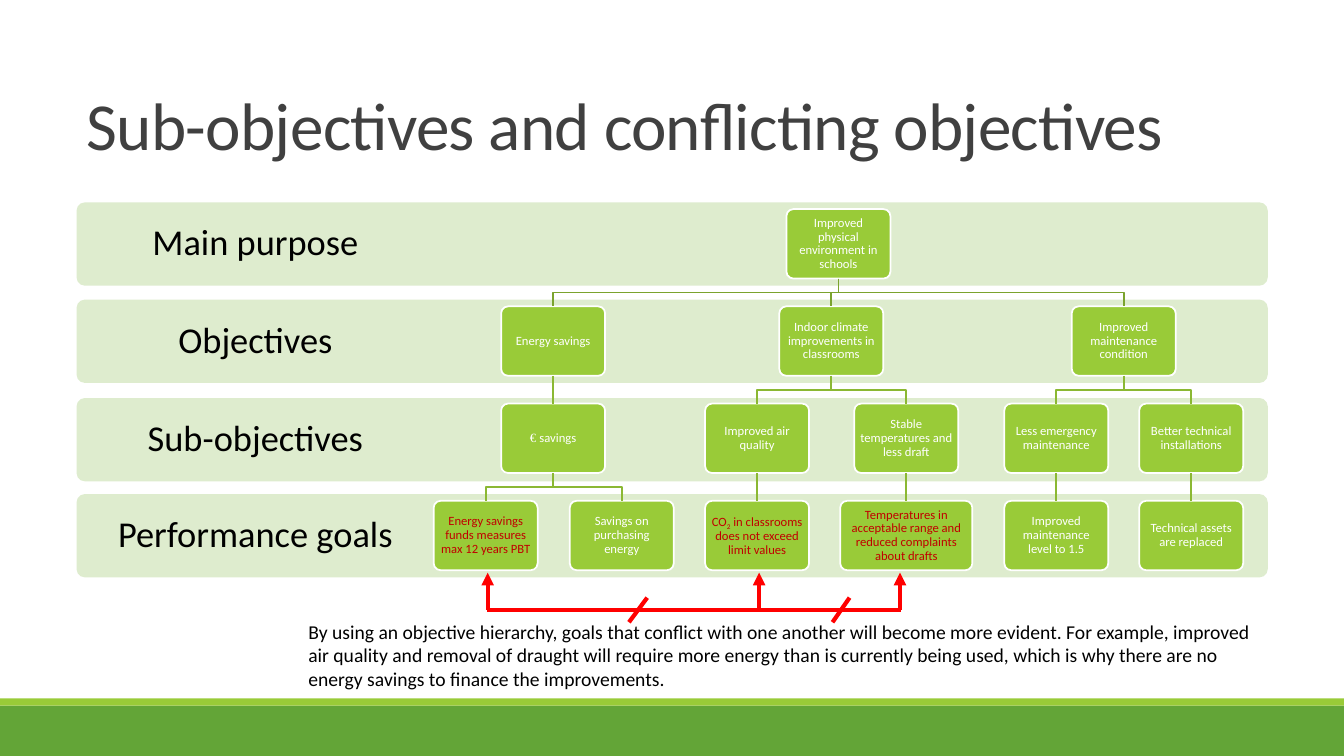
"""Build the slide on sub-objectives and conflicting objectives."""
from pptx import Presentation
from pptx.dml.color import RGBColor
from pptx.enum.shapes import MSO_CONNECTOR, MSO_SHAPE
from pptx.enum.text import MSO_ANCHOR, PP_ALIGN
from pptx.oxml.ns import qn
from pptx.util import Cm, Pt
from lxml.etree import SubElement

WHITE = RGBColor(0xFF, 0xFF, 0xFF)
BLACK = RGBColor(0, 0, 0)
GREY = RGBColor(0x40, 0x40, 0x40)
GREEN = RGBColor(0x63, 0xA5, 0x37)
LIME = RGBColor(0x99, 0xCB, 0x38)
PALE = RGBColor(0xDE, 0xEC, 0xCE)
OLIVE = RGBColor(0x7B, 0xA3, 0x2D)
MOSS = RGBColor(0x8B, 0xB8, 0x33)
DARK_RED = RGBColor(0xC0, 0, 0)
RED = RGBColor(0xFF, 0, 0)

TITLE = "Sub-objectives and conflicting objectives"
NOTE = ("By using an objective hierarchy, goals that conflict with one another will "
        "become more evident. For example, improved air quality and removal of draught "
        "will require more energy than is currently being used, which is why there are "
        "no energy savings to finance the improvements.")
BANDS = [("Main purpose", 5.1), ("Objectives", 7.55),
         ("Sub-objectives", 10.03), ("Performance goals", 12.45)]
EURO = [("€ ", "Times New Roman", 0), ("savings", "Calibri", 0)]
CO2 = [("CO", "Calibri", 0), ("2", "Calibri", -25),
       (" in classrooms does not exceed limit values", "Calibri", 0)]

# Each goal: name, parent, row, centre, text, text colour, width
GOALS = [
    ("root", None, 0, 21.13, "Improved physical environment in schools", WHITE, 2.62),
    ("energy", "root", 1, 13.94, "Energy savings", WHITE, 2.62),
    ("climate", "root", 1, 20.95, "Indoor climate improvements in classrooms", WHITE, 2.62),
    ("upkeep", "root", 1, 28.32, "Improved maintenance condition", WHITE, 2.62),
    ("euro", "energy", 2, 13.94, EURO, WHITE, 2.62),
    ("air", "climate", 2, 19.08, "Improved air quality", WHITE, 2.62),
    ("heat", "climate", 2, 22.84, "Stable temperatures and less draft", WHITE, 2.62),
    ("repair", "upkeep", 2, 26.62, "Less emergency maintenance", WHITE, 2.62),
    ("plant", "upkeep", 2, 30.02, "Better technical installations", WHITE, 2.62),
    ("funds", "euro", 3, 12.24, "Energy savings funds measures max 12 years PBT",
     DARK_RED, 2.62),
    ("buying", "euro", 3, 15.67, "Savings on purchasing energy", WHITE, 2.62),
    ("limit", "air", 3, 19.08, CO2, DARK_RED, 2.62),
    ("range", "heat", 3, 22.84,
     "Temperatures in acceptable range and reduced complaints about drafts",
     DARK_RED, 3.33),
    ("level", "repair", 3, 26.62, "Improved maintenance level to 1.5", WHITE, 2.62),
    ("assets", "plant", 3, 30.02, "Technical assets are replaced", WHITE, 2.62),
]
ARROWS = [12.29, 19.13, 22.68]
SLASHES = [(15.85, 16.31), (20.98, 21.41)]
TOP, STEP, TALL = 5.27, 2.45, 1.75
BAR, TIP = 15.37, 14.43


def write(shape, text, size, color, inset=None, align=PP_ALIGN.CENTER,
          anchor=MSO_ANCHOR.MIDDLE, lead=0.9, track=0):
    frame = shape.text_frame
    frame.word_wrap = True
    frame.vertical_anchor = anchor
    if inset is not None:
        frame.margin_left = frame.margin_right = Cm(inset)
        frame.margin_top = frame.margin_bottom = Cm(inset)
    para = frame.paragraphs[0]
    para.alignment = align
    para.line_spacing = lead
    runs = [(text, "Calibri", 0)] if isinstance(text, str) else text
    for words, face, base in runs:
        run = para.add_run()
        run.text = words
        run.font.name = face
        run.font.size = Pt(size)
        run.font.color.rgb = color
        props = run._r.get_or_add_rPr()
        if base:
            props.set("baseline", str(base * 1000))
        if track:
            props.set("spc", str(track))


def block(shapes, kind, left, top, width, height, fill, edge=None):
    shape = shapes.add_shape(kind, Cm(left), Cm(top), Cm(width), Cm(height))
    shape.shadow.inherit = False
    shape.fill.solid()
    shape.fill.fore_color.rgb = fill
    if kind == MSO_SHAPE.ROUNDED_RECTANGLE:
        shape.adjustments[0] = 0.1
    if edge is None:
        shape.line.fill.background()
    else:
        shape.line.color.rgb = edge
        shape.line.width = Pt(1.25)
    return shape


def label(shapes, left, top, width, height):
    return shapes.add_textbox(Cm(left), Cm(top), Cm(width), Cm(height))


def stroke(shapes, start, end, color, width, arrow=False):
    line = shapes.add_connector(MSO_CONNECTOR.STRAIGHT, *map(Cm, start + end))
    line.line.color.rgb = color
    line.line.width = Pt(width)
    props = line._element.spPr
    if arrow:
        SubElement(props.find(qn("a:ln")), qn("a:tailEnd"), type="triangle")
    SubElement(props, qn("a:effectLst"))
    return line


def link(shapes, upper, lower, row, start, end):
    color = OLIVE if row == 1 else MOSS
    high, low = TOP + STEP * (row - 1) + TALL, TOP + STEP * row
    if start == end:
        line = stroke(shapes, (start, high), (end, low), color, 1.25)
        line.begin_connect(upper, 2)
        line.end_connect(lower, 0)
        return
    mid = (high + low) / 2
    pen = shapes.build_freeform(Cm(start), Cm(high))
    bends = [(start, mid), (end, mid), (end, low)]
    pen.add_line_segments([(Cm(x), Cm(y)) for x, y in bends], close=False)
    elbow = pen.convert_to_shape()
    elbow.shadow.inherit = False
    elbow.fill.background()
    elbow.line.color.rgb = color
    elbow.line.width = Pt(1.25)


def main():
    deck = Presentation()
    deck.slide_width, deck.slide_height = Cm(33.87), Cm(19.05)
    shapes = deck.slides.add_slide(deck.slide_layouts[6]).shapes

    block(shapes, MSO_SHAPE.RECTANGLE, 0, 17.78, 33.87, 1.27, GREEN)
    block(shapes, MSO_SHAPE.RECTANGLE, 0, 17.6, 33.87, 0.18, LIME)
    write(label(shapes, 1.93, 0.23, 29.06, 4.04), TITLE, 48, GREY,
          align=PP_ALIGN.LEFT, anchor=MSO_ANCHOR.BOTTOM, lead=0.85, track=-50)

    for text, top in BANDS:
        block(shapes, MSO_SHAPE.ROUNDED_RECTANGLE, 1.93, top, 30.02, 2.1, PALE)
        write(label(shapes, 1.93, top, 9.02, 2.1), text, 26, BLACK, inset=0.5)

    boxes = {}
    for name, above, row, mid, text, color, wide in GOALS:
        box = block(shapes, MSO_SHAPE.ROUNDED_RECTANGLE, mid - wide / 2,
                    TOP + STEP * row, wide, TALL, LIME, WHITE)
        write(box, text, 9, color, inset=0.1)
        boxes[name] = box, mid
        if above:
            upper, start = boxes[above]
            link(shapes, upper, box, row, start, mid)

    for x in ARROWS:
        stroke(shapes, (x, BAR), (x, TIP), RED, 3, arrow=True)
    stroke(shapes, (ARROWS[0] - 0.02, BAR), (ARROWS[-1] + 0.02, BAR), RED, 3)
    for left, right in SLASHES:
        stroke(shapes, (left, 15.68), (right, 15.06), RED, 3)

    write(label(shapes, 7.52, 15.49, 24.82, 2.06), NOTE, 14, BLACK,
          align=PP_ALIGN.LEFT, anchor=MSO_ANCHOR.TOP, lead=1.0)
    deck.save("out.pptx")


if __name__ == "__main__":
    main()
